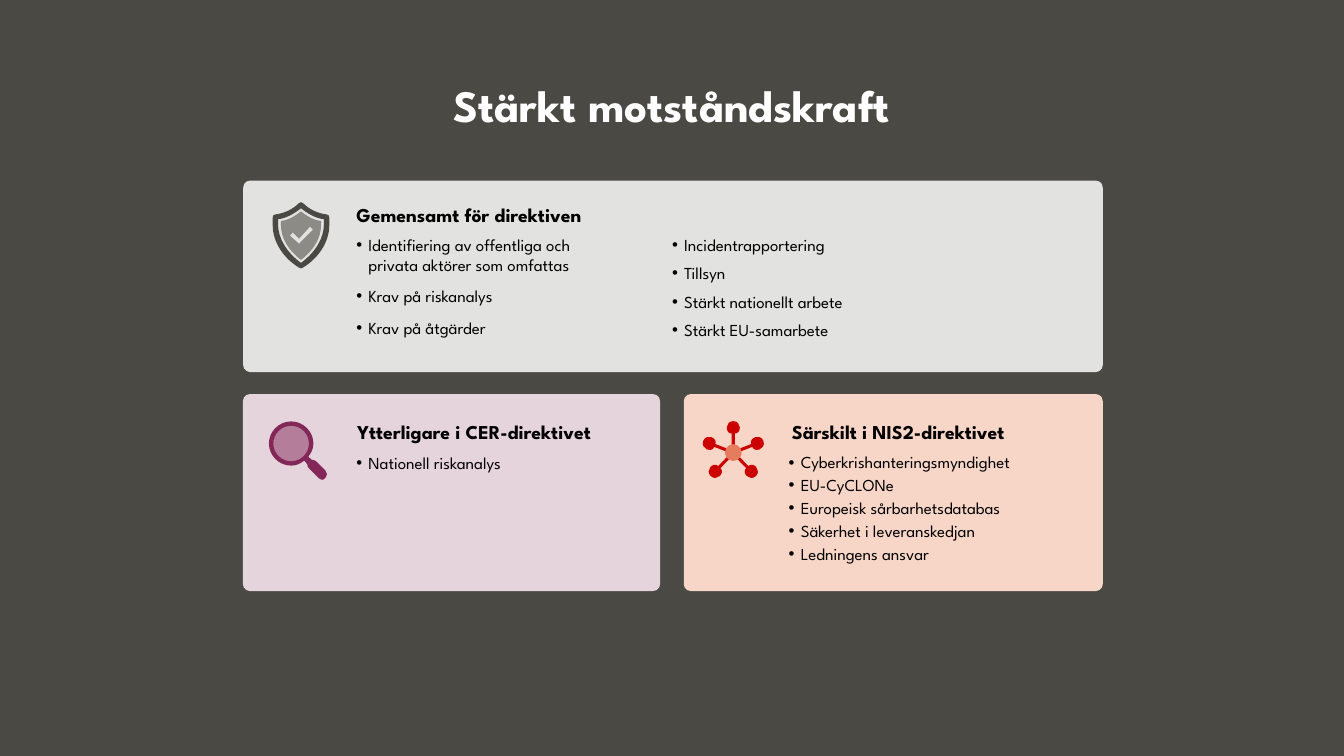
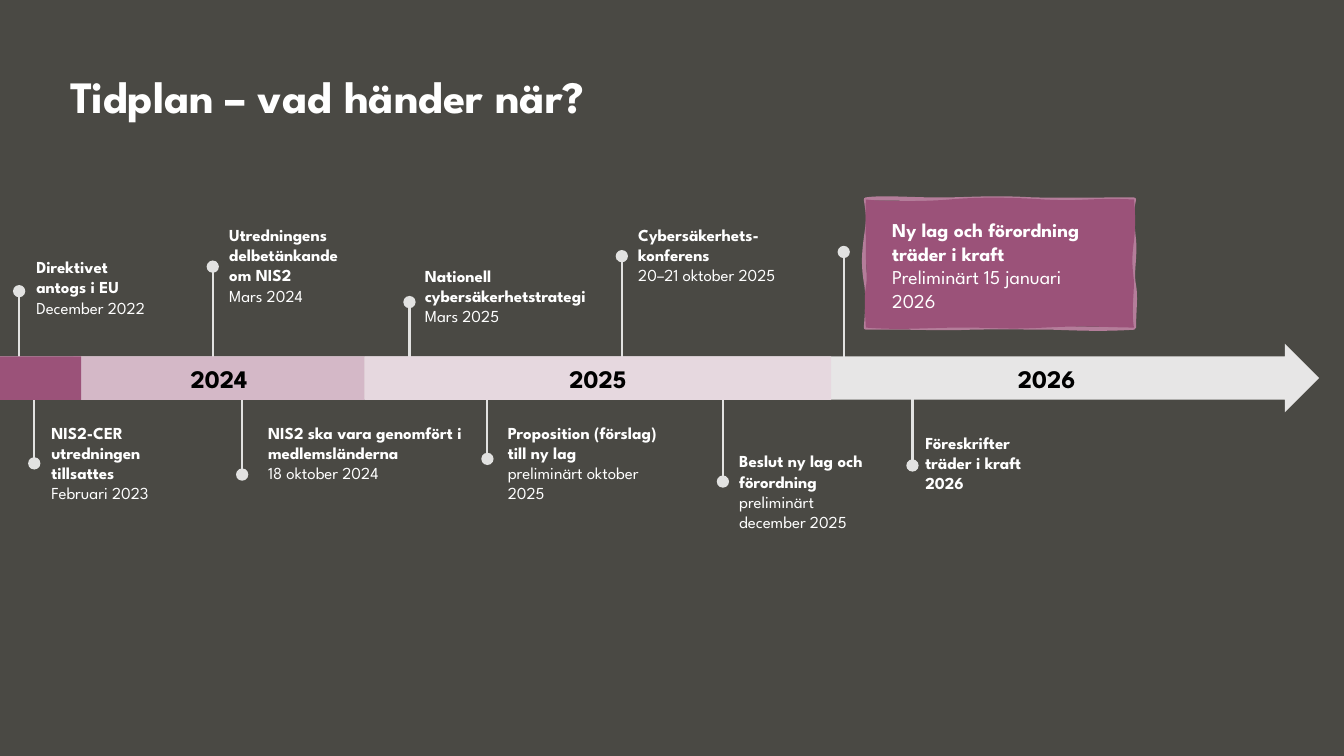
from copy import deepcopy
from math import hypot

from lxml import etree
from pptx import Presentation
from pptx.dml.color import RGBColor
from pptx.enum.shapes import MSO_CONNECTOR, MSO_SHAPE
from pptx.enum.text import MSO_ANCHOR, PP_ALIGN
from pptx.oxml.ns import qn
from pptx.util import Pt

FONT = "League Spartan"
DARK = RGBColor(0x4A, 0x49, 0x44)
GRAY = RGBColor(0x8C, 0x8B, 0x85)
LIGHT = RGBColor(0xE2, 0xE2, 0xE1)
ARROW = RGBColor(0xE7, 0xE6, 0xE6)
WHITE = RGBColor(0xFF, 0xFF, 0xFF)
BLACK = RGBColor(0, 0, 0)
PEACH = RGBColor(0xF8, 0xD6, 0xC7)
CORAL = RGBColor(0xE6, 0x7C, 0x5E)
RED = RGBColor(0xCC, 0, 0)
PINK = RGBColor(0xE6, 0xD4, 0xDD)
PALE = RGBColor(0xE6, 0xD8, 0xDF)
ROSE = RGBColor(0xD4, 0xB8, 0xC7)
MAUVE = RGBColor(0xB4, 0x7D, 0x9A)
PLUM = RGBColor(0x9B, 0x52, 0x79)
WINE = RGBColor(0x82, 0x27, 0x57)

RECT, ROUND = MSO_SHAPE.RECTANGLE, MSO_SHAPE.ROUNDED_RECTANGLE
OVAL, POINTER = MSO_SHAPE.OVAL, MSO_SHAPE.RIGHT_ARROW
STRAIGHT = MSO_CONNECTOR.STRAIGHT
LEFT, CENTER = PP_ALIGN.LEFT, PP_ALIGN.CENTER
TOP, MIDDLE = MSO_ANCHOR.TOP, MSO_ANCHOR.MIDDLE

UNIT = 100  # freeform steps per point
BAND_Y, BAND_H = 254.6, 31

# Each path: start point, then Bézier curves (six numbers) or lines (two).
EDGE = [
    (18.3, -15.1), (11.8, -15.9, 6, -18.7, 1.7, -23),
    (0.9, -24.2, -0.9, -24.2, -1.7, -23), (-6, -18.7, -11.8, -15.9, -18.3, -15.1),
    (-19.5, -15.1, -20.2, -14.3, -20.2, -13), (-20.2, -7.2),
    (-20.2, 5, -12, 16.6, -1.2, 23), (-0.5, 23.6, 0.5, 23.6, 1.2, 23),
    (12, 16.6, 20.2, 5, 20.2, -7.2), (20.2, -13),
    (20.2, -14.3, 19.5, -15.1, 18.3, -15.1)]
SHIELD = [(0, -1), (0.3, -0.8, 0.65, -0.63, 1, -0.6), (1, -0.42),
          (1, 0.08, 0.65, 0.6, 0, 1), (-0.65, 0.6, -1, 0.08, -1, -0.42),
          (-1, -0.6), (-0.65, -0.63, -0.3, -0.8, 0, -1)]
CHECK = [(-1.4, 5.8), (-7.9, 0), (-5.8, -2.2), (-1.4, 2.2), (6.5, -6.5),
         (8.6, -4.3)]
RIM = [
    (24.5, 19.4), (18.1, 13), (17.3, 12.2, 15.9, 11.5, 14.5, 11.5),
    (12.3, 9.4), (14.5, 6.5, 15.9, 3.6, 15.9, 0),
    (15.9, -8.6, 8.7, -15.8, 0, -15.8), (-8.7, -15.8, -15.9, -8.6, -15.9, 0),
    (-15.9, 8.6, -8.7, 15.8, 0, 15.8), (3.6, 15.8, 6.6, 14.4, 9.4, 12.2),
    (11.6, 15), (11.6, 15.8, 11.6, 17.3, 13, 18), (19.5, 24.5),
    (20.2, 25.2, 21, 25.9, 22.4, 25.9), (23.1, 25.9, 23.8, 25.2, 24.5, 24.5),
    (26, 23, 26, 20.9, 24.5, 19.4)]
HOLE = [(0, 1), (-0.55, 1, -1, 0.55, -1, 0), (-1, -0.55, -0.55, -1, 0, -1),
        (0.55, -1, 1, -0.55, 1, 0), (1, 0.55, 0.55, 1, 0, 1)]
FRAME = [
    (618.5, 142.5), (631, 140.5, 656, 143, 678, 142.5),
    (700.5, 142, 711.5, 141, 738, 142.5), (765.5, 143, 779, 142.5, 810, 142.5),
    (808, 151, 808.5, 157.5, 810, 171.5), (811, 185, 808, 195, 810, 204),
    (811.5, 212.5, 810, 221, 810, 234), (786, 235.5, 769, 234.5, 751.5, 234),
    (734, 234, 719.5, 233.5, 693.5, 234), (668, 235, 653, 233.5, 618.5, 234),
    (619, 227.5, 620.5, 211.5, 618.5, 201.5),
    (617, 191.5, 616.5, 185, 618.5, 170),
    (620.5, 155.5, 620.5, 155.5, 618.5, 142.5)]
PANEL = [
    (618.5, 142.5), (631, 144, 661.5, 144, 678, 142.5),
    (695, 141, 716.5, 140.5, 746, 142.5), (775.5, 144, 779, 141, 810, 142.5),
    (810.5, 148.5, 811.5, 157.5, 810, 172), (808, 186, 809, 191, 810, 201),
    (810, 211, 808, 222.5, 810, 234), (780.5, 233.5, 775.5, 232.5, 746, 234),
    (716.5, 235.5, 715.5, 234, 687.5, 234), (660, 234, 644.5, 236, 618.5, 234),
    (618, 225.5, 617, 213, 618.5, 205), (620, 197.5, 618, 185, 618.5, 176.5),
    (618.5, 168, 618, 155, 618.5, 142.5)]

# Pin x, dot y, then text left, top, width, bold part, plain part.
EVENTS = [
    (13.7, 208, 14.4, 180, 101, "Direktivet antogs i EU", "December 2022"),
    (24.5, 331, 25.2, 298.2, 109, "NIS2-CER utredningen tillsattes",
     "Februari 2023"),
    (152, 190.5, 152.2, 157, 104, "Utredningens delbetänkande om NIS2",
     "Mars 2024"),
    (173, 339, 180, 298.2, 161, "NIS2 ska vara genomfört i medlemsländerna",
     "18 oktober 2024"),
    (292.5, 215.8, 292, 186.3, 161, "Nationell cybersäkerhetstrategi",
     "Mars 2025"),
    (348.2, 327.8, 351.2, 298.2, 135, "Proposition (förslag) till ny lag",
     "preliminärt oktober 2025"),
    (444.2, 183, 444.4, 157, 139, "Cybersäkerhets-konferens",
     "20–21 oktober 2025"),
    (516.4, 344, 516.5, 318.7, 117, "Beslut ny lag och förordning",
     "preliminärt december 2025"),
    (651.8, 332.5, 649.5, 305.3, 107, "Föreskrifter träder i kraft 2026", ""),
]


def paint(item, fill, line=None, width=1):
    item.shadow.inherit = False
    item.fill.solid()
    item.fill.fore_color.rgb = fill
    if line is None:
        item.line.fill.background()
    else:
        item.line.color.rgb = line
        item.line.width = Pt(width)
    return item


def shape(slide, kind, x, y, w, h, fill):
    item = slide.shapes.add_shape(kind, Pt(x), Pt(y), Pt(w), Pt(h))
    return paint(item, fill)


def disc(slide, x, y, r, fill):
    shape(slide, OVAL, x - r, y - r, 2 * r, 2 * r, fill)


def place(path, x, y, w=1, h=1):
    """Scale a path and move its origin to x, y."""
    return [tuple(y + h * n if i % 2 else x + w * n for i, n in enumerate(part))
            for part in path]


def outline(slide, paths, fill, line=None, width=1):
    """Draw closed paths as one freeform; later paths cut holes."""
    grids = [[(part[i] * UNIT, part[i + 1] * UNIT) for part in path
              for i in range(0, len(part), 2)] for path in paths]
    pen = slide.shapes.build_freeform(*grids[0][0], scale=Pt(1) / UNIT)
    for i, grid in enumerate(grids):
        if i:
            pen.move_to(*grid[0])
        pen.add_line_segments(grid[1:], close=True)
    item = paint(pen.convert_to_shape(), fill, line, width)
    nodes = iter(list(next(item._element.iter(qn("a:path")))))
    for path in paths:
        next(nodes)
        for part in path[1:]:
            steps = [next(nodes) for _ in range(len(part) // 2)]
            if len(steps) == 3:
                curve = etree.Element(qn("a:cubicBezTo"))
                steps[0].addprevious(curve)
                for step in steps:
                    curve.append(step[0])
                    step.getparent().remove(step)
        next(nodes)
    return item


def style(para, size, color, bold=False, align=LEFT):
    para.alignment = align
    for run in para.runs:
        run.font.name = FONT
        run.font.size = Pt(size)
        run.font.bold = bold
        run.font.color.rgb = color


def box(slide, x, y, w, h, anchor=TOP):
    frame = slide.shapes.add_textbox(Pt(x), Pt(y), Pt(w), Pt(h)).text_frame
    frame.word_wrap = True
    frame.vertical_anchor = anchor
    return frame


def title(slide, text, x, y, align):
    frame = box(slide, x, y, 828, 40, MIDDLE)
    frame.text = text
    frame.paragraphs[0].line_spacing = 0.9
    style(frame.paragraphs[0], 32, WHITE, True, align)


def head(slide, text, x, y):
    frame = box(slide, x, y, 220, 34)
    frame.text = text
    style(frame.paragraphs[0], 14, BLACK, True)


def bullets(slide, items, x, y, w, gap):
    frame = box(slide, x, y, w, 84)
    frame.text = "\n".join(items)
    for i, para in enumerate(frame.paragraphs):
        props = para._p.get_or_add_pPr()
        props.set("marL", str(Pt(8.6)))
        props.set("indent", str(-Pt(8.6)))
        etree.SubElement(props, qn("a:buFont")).set("typeface", "Arial")
        etree.SubElement(props, qn("a:buChar")).set("char", "•")
        if i:
            para.space_before = Pt(gap)
        style(para, 12, BLACK)


def card(slide, x, y, w, h, fill):
    item = shape(slide, ROUND, x, y, w, h, fill)
    item.adjustments[0] = 5 / h


def shield(slide, x, y):
    outline(slide, [place(EDGE, x, y), place(SHIELD, x, y, 16.4, 19.5)], DARK)
    outline(slide, [place(SHIELD, x, y, 14.3, 17.3), place(CHECK, x, y)], GRAY)


def lens(slide, x, y):
    disc(slide, x, y, 13, MAUVE)
    outline(slide, [place(RIM, x, y), place(HOLE, x, y, 12.7, 12.7)], WINE)


def network(slide, x, y):
    path = []
    for dx, dy in ((0, -18), (17.3, -6.7), (13, 13.5), (-13, 13.5), (-17.3, -6.7)):
        d = hypot(dx, dy)
        near, far = d - 4.4, d + 4.5
        arm = [(5, -1.1), (near, -1.1), (near, -6, far, -6, far, 0),
               (far, 6, near, 6, near, 1.1), (5, 1.1)]
        for part in arm:
            turned = []
            for u, v in zip(part[::2], part[1::2]):
                turned += [x + (u * dx - v * dy) / d, y + (u * dy + v * dx) / d]
            path.append(tuple(turned))
    outline(slide, [path], RED)
    disc(slide, x, y, 6, CORAL)


def banner(slide):
    """Wavy panel: the frame is only stroked, the panel only filled."""
    item = outline(slide, [FRAME, PANEL], PLUM, MAUVE, 3)
    frame = next(item._element.iter(qn("a:path")))
    panel = deepcopy(frame)
    frame.addnext(panel)
    cut = len(FRAME) + 1
    for node in list(frame)[cut:]:
        frame.remove(node)
    for node in list(panel)[:cut]:
        panel.remove(node)
    frame.set("fill", "none")
    panel.set("stroke", "0")


def pin(slide, x, y):
    end = Pt(BAND_Y + BAND_H / 2)
    item = slide.shapes.add_connector(STRAIGHT, Pt(x), Pt(y), Pt(x), end)
    item.line.color.rgb = LIGHT
    item.line.width = Pt(1.5)
    etree.SubElement(item._element.spPr, qn("a:effectLst"))
    disc(slide, x, y, 4.4, LIGHT)


def event(slide, x, y, w, bold, plain, size=12):
    frame = box(slide, x, y, w, 51)
    frame.margin_left = Pt(11.5)
    frame.text = "\n".join(filter(None, (bold, plain)))
    for i, para in enumerate(frame.paragraphs):
        style(para, size, WHITE, i == 0)


def year(item, text):
    frame = item.text_frame
    frame.vertical_anchor = MIDDLE
    frame.text = text
    style(frame.paragraphs[0], 18, BLACK, True, CENTER)


def strength(slide):
    title(slide, "Stärkt motståndskraft", 66, 57.3, CENTER)
    card(slide, 173.7, 129, 614, 136.8, LIGHT)
    card(slide, 173.5, 281.5, 298, 140.7, PINK)
    card(slide, 488.4, 281.5, 299.3, 140.7, PEACH)
    shield(slide, 215, 168.3)
    lens(slide, 208, 316.8)
    network(slide, 523.8, 323.3)
    head(slide, "Gemensamt för direktiven", 247.5, 141.2)
    head(slide, "Ytterligare i CER-direktivet", 248.2, 296.1)
    head(slide, "Särskilt i NIS2-direktivet", 558.5, 296.1)
    bullets(slide, ["Identifiering av offentliga och privata aktörer som omfattas",
                    "Krav på riskanalys", "Krav på åtgärder"],
            247.5, 164, 185, 8)
    bullets(slide, ["Incidentrapportering", "Tillsyn", "Stärkt nationellt arbete",
                    "Stärkt EU-samarbete"], 473, 163.8, 226, 6)
    bullets(slide, ["Nationell riskanalys"], 247.5, 319.7, 220, 2)
    bullets(slide, ["Cyberkrishanteringsmyndighet", "EU-CyCLONe",
                    "Europeisk sårbarhetsdatabas", "Säkerhet i leveranskedjan",
                    "Ledningens ansvar"], 556.3, 319.4, 215, 2)


def timeline(slide):
    title(slide, "Tidplan – vad händer när?", 43.2, 50.5, LEFT)
    for x, y, left, top, width, bold, plain in EVENTS:
        pin(slide, x, y)
        event(slide, left, top, width, bold, plain)
    pin(slide, 602.7, 180)
    banner(slide)
    event(slide, 625.8, 152.2, 174, "Ny lag och förordning träder i kraft",
          "Preliminärt 15 januari 2026", 14)
    arrow = shape(slide, POINTER, 0, 245.5, 942.3, 49, ARROW)
    arrow.adjustments[0] = 0.63
    arrow.adjustments[1] = 0.5
    arrow.text_frame.margin_left = Pt(575.7)
    year(arrow, "2026")
    year(shape(slide, RECT, 52.5, BAND_Y, 208, BAND_H, ROSE), "2024")
    year(shape(slide, RECT, 260.5, BAND_Y, 333.2, BAND_H, PALE), "2025")
    shape(slide, RECT, 0, BAND_Y, 58, BAND_H, PLUM)


def main():
    deck = Presentation()
    deck.slide_width, deck.slide_height = Pt(960), Pt(540)
    for build in (strength, timeline):
        slide = deck.slides.add_slide(deck.slide_layouts[6])
        slide.background.fill.solid()
        slide.background.fill.fore_color.rgb = DARK
        build(slide)
    deck.save("out.pptx")


if __name__ == "__main__":
    main()
